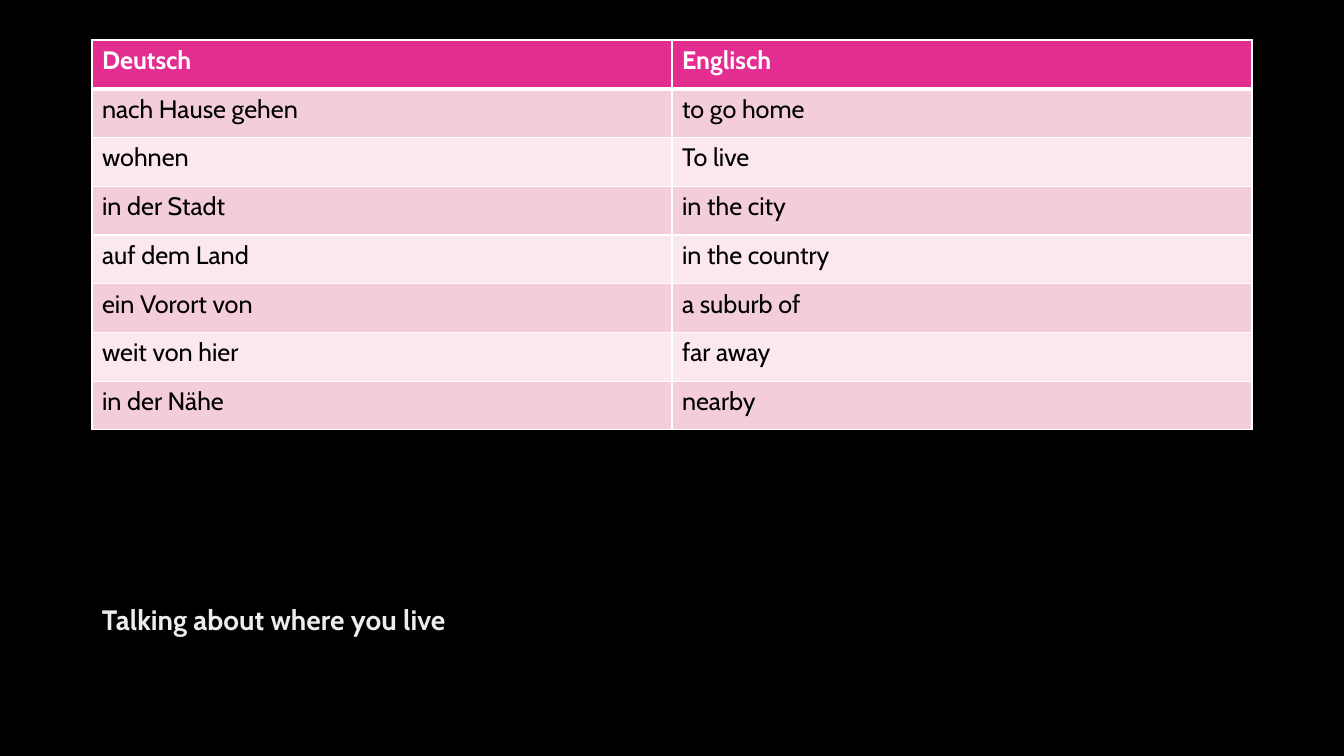
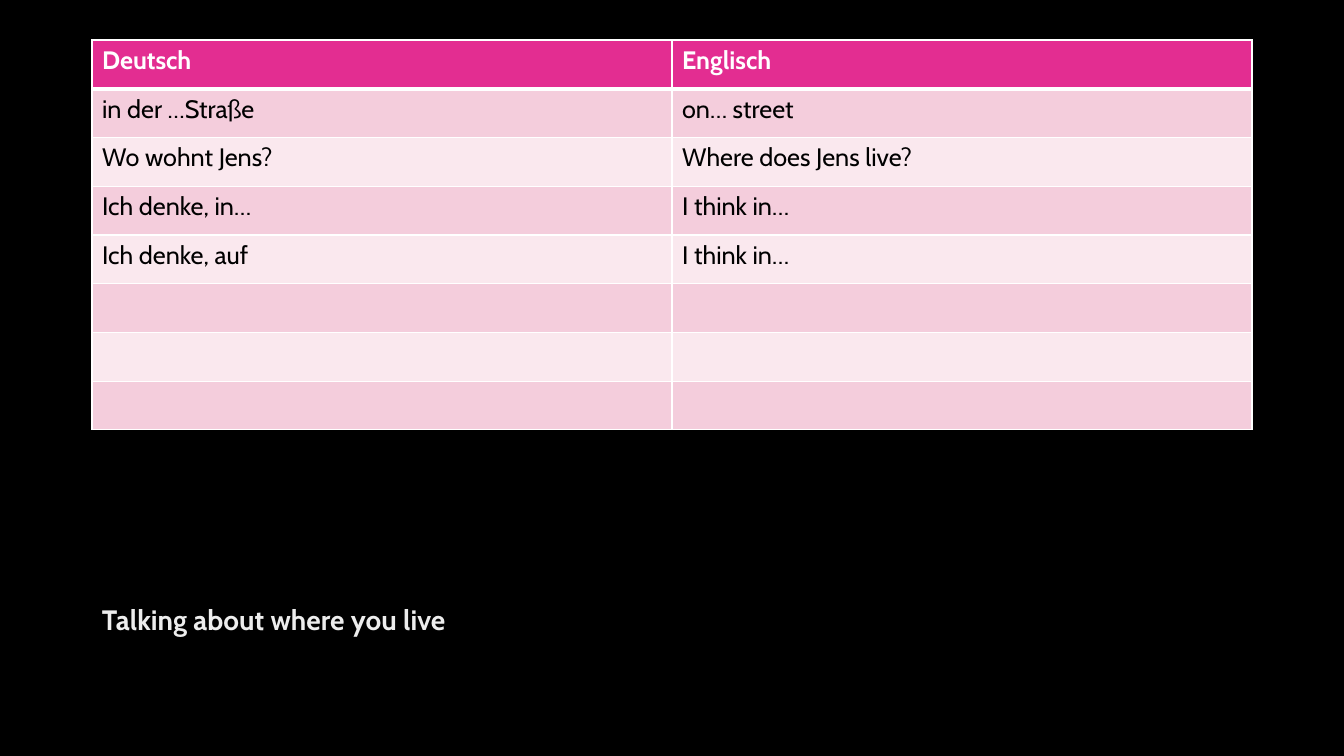
from dataclasses import dataclass

from lxml import etree
from pptx import Presentation
from pptx.dml.color import RGBColor
from pptx.enum.text import MSO_ANCHOR
from pptx.oxml.ns import qn
from pptx.util import Pt

BOTTOM = MSO_ANCHOR.BOTTOM
SLIDE_W, SLIDE_H = 1344, 756
PX = 12192000 / SLIDE_W
BLANK = 6


@dataclass(frozen=True)
class Theme:
    font: str = "Cabin"
    background: str = "000000"
    header: str = "E32D91"
    header_text: str = "FFFFFF"
    bands: tuple = ("F4CDDC", "FAE8EE")
    body_text: str = "000000"
    border: str = "FFFFFF"
    caption: str = "EDEDED"
    cell_size: int = 18
    caption_size: int = 20
    thin: int = 1
    thick: int = 3


THEME = Theme()
TABLE_BOX = (92, 40, 1160, 390)
CAPTION_BOX = (92, 495, 1160, 165)
CAPTION = "Talking about where you live"
HEADINGS = ("Deutsch", "Englisch")
ROWS = 8  # heading row included
WORD_LISTS = [
    [
        ("nach Hause gehen", "to go home"),
        ("wohnen", "To live"),
        ("in der Stadt", "in the city"),
        ("auf dem Land", "in the country"),
        ("ein Vorort von", "a suburb of"),
        ("weit von hier", "far away"),
        ("in der Nähe", "nearby"),
    ],
    [
        ("in der …Straße", "on… street"),
        ("Wo wohnt Jens?", "Where does Jens live?"),
        ("Ich denke, in…", "I think in…"),
        ("Ich denke, auf", "I think in…"),
    ],
]


def px(n):
    return round(n * PX)


def rgb(value):
    return RGBColor.from_string(value)


def set_font(p, size, color, bold):
    p.font.name = THEME.font
    p.font.size = Pt(size)
    p.font.bold = bold
    p.font.color.rgb = rgb(color)


def set_borders(cell, top, bottom):
    tcPr = cell._tc.get_or_add_tcPr()
    widths = {"lnL": THEME.thin, "lnR": THEME.thin, "lnT": top, "lnB": bottom}
    for tag, width in widths.items():
        ln = etree.SubElement(tcPr, qn(f"a:{tag}"), w=str(Pt(width)))
        fill = etree.SubElement(ln, qn("a:solidFill"))
        etree.SubElement(fill, qn("a:srgbClr"), val=THEME.border)


def style_cell(cell, row, text):
    is_header = row == 0
    # The heavy rule lies between the heading and the first word
    set_borders(cell,
                top=THEME.thick if row == 1 else THEME.thin,
                bottom=THEME.thick if is_header else THEME.thin)
    cell.fill.solid()
    cell.fill.fore_color.rgb = rgb(
        THEME.header if is_header else THEME.bands[(row - 1) % 2])
    p = cell.text_frame.paragraphs[0]
    if text:
        p.add_run().text = text
    set_font(p, THEME.cell_size,
             THEME.header_text if is_header else THEME.body_text, is_header)


def add_word_table(s, box, words):
    x, y, w, h = map(px, box)
    cols = len(HEADINGS)
    table = s.shapes.add_table(ROWS, cols, x, y, w, h).table
    for column in table.columns:
        column.width = w // cols
    for row in table.rows:
        row.height = h // ROWS
    lines = [HEADINGS, *words]
    lines += [("",) * cols] * (ROWS - len(lines))
    for r, line in enumerate(lines):
        for c, text in enumerate(line):
            style_cell(table.cell(r, c), r, text)


def add_caption(s, box):
    tf = s.shapes.add_textbox(*map(px, box)).text_frame
    tf.word_wrap = True
    tf.vertical_anchor = BOTTOM
    tf.margin_bottom = px(23)
    p = tf.paragraphs[0]
    p.add_run().text = CAPTION
    p.line_spacing = 0.9
    set_font(p, THEME.caption_size, THEME.caption, True)


def add_vocabulary_slide(prs, words):
    s = prs.slides.add_slide(prs.slide_layouts[BLANK])
    s.background.fill.solid()
    s.background.fill.fore_color.rgb = rgb(THEME.background)
    add_caption(s, CAPTION_BOX)
    add_word_table(s, TABLE_BOX, words)


def main():
    prs = Presentation()
    prs.slide_width, prs.slide_height = px(SLIDE_W), px(SLIDE_H)
    for words in WORD_LISTS:
        add_vocabulary_slide(prs, words)
    prs.save("out.pptx")


if __name__ == "__main__":
    main()
